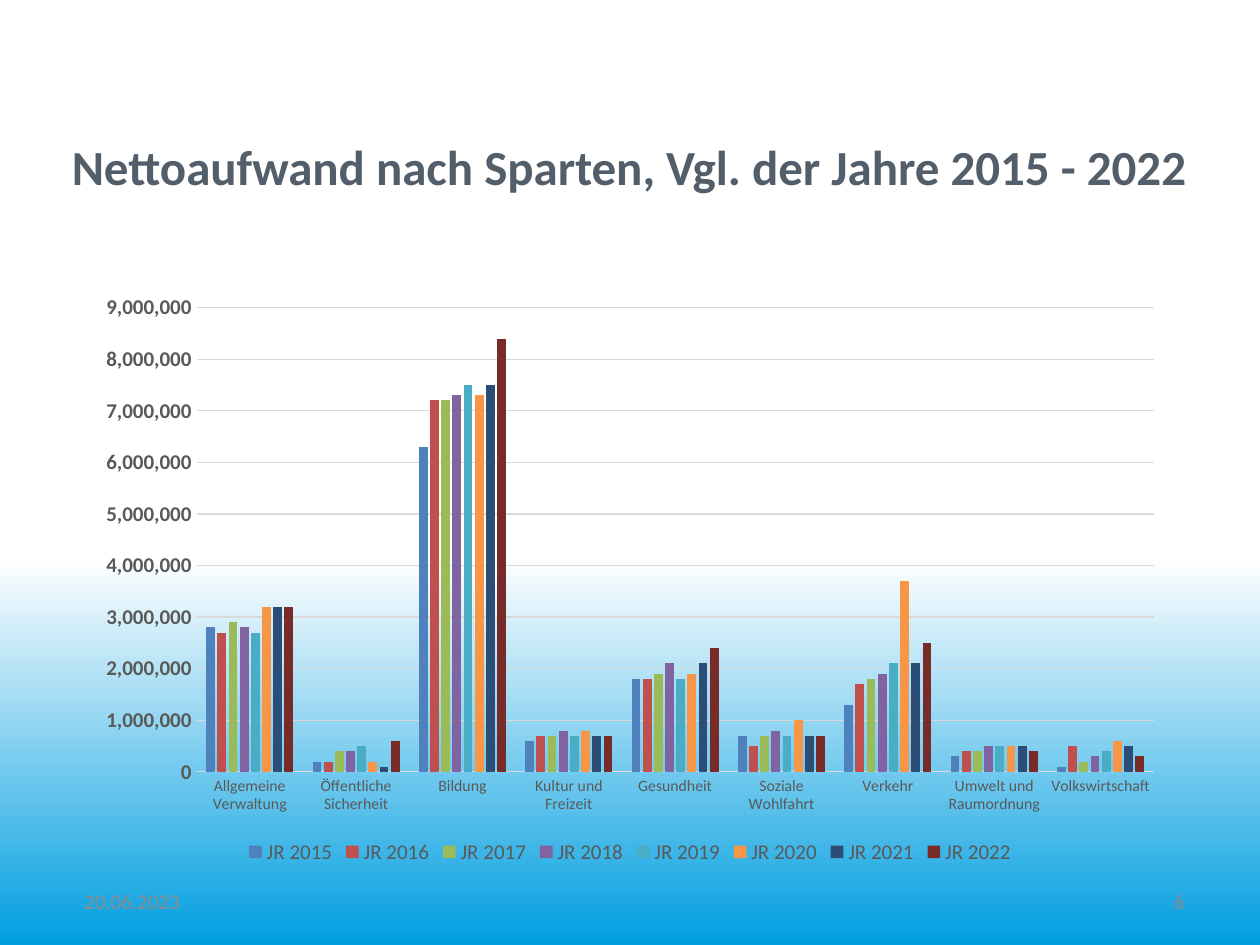
from pptx import Presentation
from pptx.chart.data import CategoryChartData
from pptx.dml.color import RGBColor
from pptx.enum.chart import XL_CHART_TYPE, XL_LEGEND_POSITION, XL_TICK_MARK
from pptx.enum.text import MSO_ANCHOR, PP_ALIGN
from pptx.util import Inches, Pt

COLUMN = XL_CHART_TYPE.COLUMN_CLUSTERED
BOTTOM = XL_LEGEND_POSITION.BOTTOM
NO_TICK = XL_TICK_MARK.NONE
TOP, MIDDLE = MSO_ANCHOR.TOP, MSO_ANCHOR.MIDDLE
LEFT, RIGHT = PP_ALIGN.LEFT, PP_ALIGN.RIGHT

# Content
TITLE = "Nettoaufwand nach Sparten, Vgl. der Jahre 2015 - 2022"
DATE, PAGE = "20.06.2023", "6"
UNIT = 100_000
FIRST = 2015
# Net cost per sector, one value a year, in units of 100,000
COSTS = {
    "Allgemeine Verwaltung": (28, 27, 29, 28, 27, 32, 32, 32),
    "Öffentliche Sicherheit": (2, 2, 4, 4, 5, 2, 1, 6),
    "Bildung": (63, 72, 72, 73, 75, 73, 75, 84),
    "Kultur und Freizeit": (6, 7, 7, 8, 7, 8, 7, 7),
    "Gesundheit": (18, 18, 19, 21, 18, 19, 21, 24),
    "Soziale Wohlfahrt": (7, 5, 7, 8, 7, 10, 7, 7),
    "Verkehr": (13, 17, 18, 19, 21, 37, 21, 25),
    "Umwelt und Raumordnung": (3, 4, 4, 5, 5, 5, 5, 4),
    "Volkswirtschaft": (1, 5, 2, 3, 4, 6, 5, 3),
}

THEME = {
    "font": "Calibri",
    "title": (28, "525E6A"), "foot": (12, "8C8C8C"),
    "value": (12, "595959"), "sector": (9, "595959"),
    "legend": (12, "595959"), "chart": (10, "000000"),
    "grid": "D9D9D9", "sky": ("FFFFFF", "009EE0"),
    "bars": ("4F81BD", "C0504D", "9BBB59", "8064A2",
             "4BACC6", "F79646", "2C4D75", "772C2A"),
}


def color(code):
    return RGBColor.from_string(code)


def style(font, role, bold=False):
    size, code = THEME[role]
    font.name, font.size, font.bold = THEME["font"], Pt(size), bold
    font.color.rgb = color(code)


def rule(line):
    line.color.rgb = color(THEME["grid"])
    line.width = Pt(0.75)


def add_text(slide, text, box, role, align=LEFT, anchor=MIDDLE, bold=False):
    frame = slide.shapes.add_textbox(*map(Inches, box)).text_frame
    frame.word_wrap = True
    frame.vertical_anchor = anchor
    frame.text = text
    para = frame.paragraphs[0]
    para.alignment = align
    style(para.runs[0].font, role, bold)
    return frame


def paint_sky(slide):
    fill = slide.background.fill
    fill.gradient()
    fill.gradient_angle = 270
    for stop, place, code in zip(fill.gradient_stops, (0.59, 1), THEME["sky"]):
        stop.position = place
        stop.color.rgb = color(code)


def add_costs(slide, box):
    data = CategoryChartData(number_format="#,##0")
    data.categories = list(COSTS)
    for year, vals in enumerate(zip(*COSTS.values()), FIRST):
        data.add_series(f"JR {year}", [val * UNIT for val in vals])
    chart = slide.shapes.add_chart(COLUMN, *map(Inches, box), data).chart
    chart.has_title = False
    style(chart.font, "chart")

    # Columns
    plot = chart.plots[0]
    plot.vary_by_categories = False
    plot.gap_width, plot.overlap = 219, -27
    for series, code in zip(plot.series, THEME["bars"]):
        series.format.fill.solid()
        series.format.fill.fore_color.rgb = color(code)
        series.invert_if_negative = False

    # Axes
    sector, value = chart.category_axis, chart.value_axis
    for axis in (sector, value):
        axis.major_tick_mark = axis.minor_tick_mark = NO_TICK
    style(sector.tick_labels.font, "sector")
    rule(sector.format.line)
    style(value.tick_labels.font, "value", bold=True)
    value.tick_labels.number_format = "#,##0"
    value.tick_labels.number_format_is_linked = False
    value.minimum_scale, value.maximum_scale = 0, 90 * UNIT
    value.major_unit = 10 * UNIT
    value.format.line.fill.background()
    rule(value.major_gridlines.format.line)

    # Legend
    chart.has_legend = True
    chart.legend.position = BOTTOM
    chart.legend.include_in_layout = False
    style(chart.legend.font, "legend")


def main():
    deck = Presentation()
    deck.slide_width, deck.slide_height = Inches(10), Inches(7.5)
    slide = deck.slides.add_slide(deck.slide_layouts[6])
    paint_sky(slide)

    # Title
    frame = add_text(slide, TITLE, (0.57, 1.08, 8.96, 0.62), "title",
                     anchor=TOP, bold=True)
    frame.margin_left = frame.margin_right = 0
    frame.margin_top = frame.margin_bottom = 0

    # Footer
    add_text(slide, DATE, (0.57, 6.95, 2.33, 0.4), "foot")
    add_text(slide, PAGE, (7.17, 6.95, 2.33, 0.4), "foot", RIGHT)

    # Chart
    add_costs(slide, (0.67, 2.25, 8.66, 4.65))
    deck.save("out.pptx")


if __name__ == "__main__":
    main()
